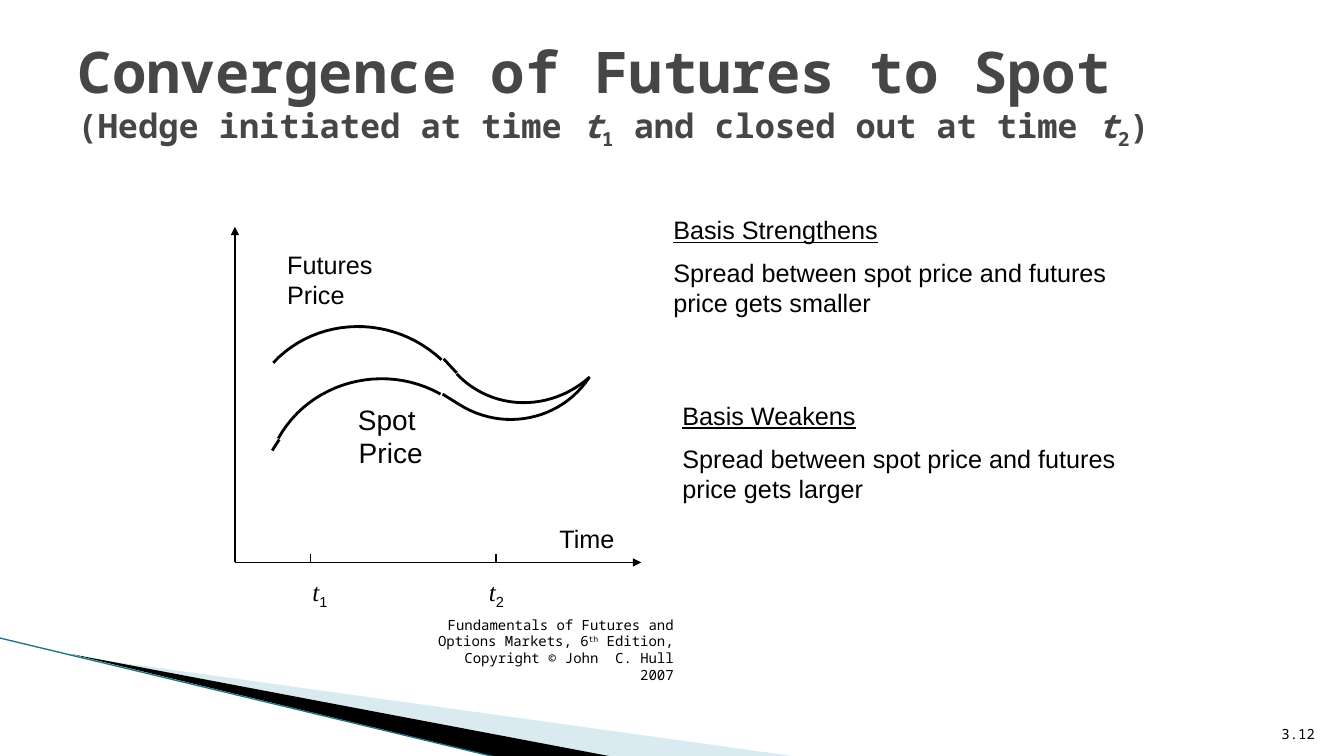
from lxml.etree import SubElement
from pptx import Presentation
from pptx.dml.color import RGBColor
from pptx.enum.shapes import MSO_CONNECTOR as Connector
from pptx.enum.text import MSO_ANCHOR as Anchor, PP_ALIGN as Align
from pptx.oxml.ns import qn
from pptx.util import Inches, Pt

COLORS = {"text": "000000", "title": "464646", "band": "A0CBDC",
          "edge": "1B7587", "ink": "000000"}
MONO, SANS, SERIF = "Noto Sans Mono", "Arial", "Times New Roman"


def color(name):
    return RGBColor.from_string(COLORS[name])


def add_run(paragraph, text, size, font=SANS, ink="text", bold=None,
            italic=None, underline=None, baseline=None):
    run = paragraph.add_run()
    run.text = text
    run.font.size = Pt(size)
    run.font.name = font
    run.font.bold, run.font.italic, run.font.underline = bold, italic, underline
    run.font.color.rgb = color(ink)
    if baseline:
        run.font._element.set("baseline", str(baseline * 1000))


def add_text(slide, box, paragraphs, align=Align.LEFT, anchor=Anchor.TOP,
             wrap=True, gap=0):
    frame = slide.shapes.add_textbox(*map(Inches, box)).text_frame
    frame.word_wrap = wrap
    frame.vertical_anchor = anchor
    for index, runs in enumerate(paragraphs):
        paragraph = frame.add_paragraph() if index else frame.paragraphs[0]
        paragraph.alignment = align
        if index:
            paragraph.space_before = Pt(gap)
        for text, style in runs:
            add_run(paragraph, text, **style)


def add_line(slide, start, end, width, ink="ink", arrow=None):
    line = slide.shapes.add_connector(
        Connector.STRAIGHT, *map(Inches, (*start, *end)))
    line.line.width = Pt(width)
    line.line.color.rgb = color(ink)
    if arrow:
        SubElement(line.line._get_or_add_ln(), qn(f"a:{arrow}"), type="triangle")
    SubElement(line._element.spPr, qn("a:effectLst"))


def add_outline(slide, points, closed):
    first, *rest = [tuple(map(Inches, point)) for point in points]
    builder = slide.shapes.build_freeform(*first)
    builder.add_line_segments(rest, close=closed)
    outline = builder.convert_to_shape()
    outline.shadow.inherit = False
    return outline


def add_curve(slide, bends, steps=24):
    points = []
    for step in range(steps + 1):
        t = step / steps
        weights = ((1 - t) ** 3, 3 * t * (1 - t) ** 2, 3 * t * t * (1 - t), t ** 3)
        points.append([sum(w * bend[axis] for w, bend in zip(weights, bends))
                       for axis in (0, 1)])
    curve = add_outline(slide, points, closed=False)
    curve.fill.background()
    curve.line.color.rgb = color("ink")
    curve.line.width = Pt(2)


def add_backdrop(slide, left, top):
    bands = (
        ("band", 40, [(0.73, 0.18), (7.93, 1.18), (6.08, 1.18)]),
        ("ink", 100, [(0.71, 0.16), (6.09, 1.18), (4.96, 1.19)]),
    )
    for ink, opacity, corners in bands:
        band = add_outline(slide, [(left + x, top + y) for x, y in corners], True)
        band.fill.solid()
        band.fill.fore_color.rgb = color(ink)
        band.line.fill.background()
        fill = band._element.spPr.find(qn("a:solidFill"))
        SubElement(fill[0], qn("a:alpha"), val=str(opacity * 1000))
    add_line(slide, (left, top), (left + 4.95, top + 1.19), 0.95, "edge")


def add_title(slide, box):
    title = slide.shapes.title
    title.left, title.top, title.width, title.height = map(Inches, box)
    frame = title.text_frame
    frame.word_wrap = True
    frame.vertical_anchor = Anchor.MIDDLE
    heading = frame.paragraphs[0]
    heading.alignment = Align.LEFT
    look = dict(font=MONO, ink="title", bold=True)
    add_run(heading, "Convergence of Futures to Spot", 41, **look)
    heading.add_line_break()
    for text, style in (
        ("(Hedge initiated at time ", {}),
        ("t", {"italic": True}),
        ("1", {"baseline": -25}),
        (" and closed out at time ", {}),
        ("t", {"italic": True}),
        ("2", {"baseline": -25}),
        (")", {}),
    ):
        add_run(heading, text, 24, **look, **style)


def add_price_chart(slide, left, top, width, height):
    def at(x, y):
        return left + x, top + y

    add_line(slide, at(0, 0), at(0, height), 1, arrow="headEnd")
    add_line(slide, at(0, height), at(width, height), 1, arrow="tailEnd")

    curves = (
        [(0.38, 1.35), (0.82, 0.88), (1.57, 0.87), (2.05, 1.32)],
        [(2.2, 1.46), (2.55, 1.83), (3.13, 1.84), (3.52, 1.49)],
        [(0.43, 2.1), (0.74, 1.54), (1.47, 1.34), (2.04, 1.66)],
        [(2.22, 1.76), (2.66, 2.04), (3.23, 1.92), (3.51, 1.5)],
    )
    for bends in curves:
        add_curve(slide, [at(*bend) for bend in bends])
    joins = (
        ((2.07, 1.31), (2.2, 1.45)),
        ((2.06, 1.66), (2.22, 1.76)),
        ((0.44, 2.11), (0.37, 2.22)),
    )
    for start, end in joins:
        add_line(slide, at(*start), at(*end), 2)

    plain = dict(size=18)
    large = dict(size=20)
    add_text(slide, (*at(3.12, 2.89), 0.75, 0.4), [[("Time", plain)]], wrap=False)
    add_text(slide, (*at(0.92, 1.69), 1.25, 0.76),
             [[("Spot ", large)], [("Price", large)]], Align.CENTER)
    add_text(slide, (*at(0.42, 0.17), 3.6, 0.7),
             [[("Futures", plain)], [("Price", plain)]])

    for digit, tick, label in (("1", 0.75, 0.67), ("2", 2.59, 2.42)):
        add_line(slide, at(tick, height), at(tick, height - 0.08), 1)
        add_text(slide, (*at(label, height + 0.09), 0.42, 0.4), [[
            ("t", dict(size=18, font=SERIF, italic=True)),
            (digit, dict(size=18, baseline=-25))]])


def add_basis_note(slide, box, heading, explanation):
    add_text(slide, box, [[(heading, dict(size=18, underline=True))],
                          [(explanation, dict(size=18))]], gap=9)


def add_footer(slide, credit_box, number_box):
    small = dict(size=10, font=MONO)
    credit = [("Fundamentals of Futures and Options Markets, 6", small),
              ("th", dict(small, baseline=30)),
              (" Edition, Copyright © John  C. Hull 2007", small)]
    for box, runs in ((credit_box, credit), (number_box, [("3.12", small)])):
        add_text(slide, box, [runs], Align.RIGHT, Anchor.BOTTOM)


def main():
    deck = Presentation()
    deck.slide_width, deck.slide_height = Inches(13.33), Inches(7.5)
    slide = deck.slides.add_slide(deck.slide_layouts[5])
    add_backdrop(slide, 0, 6.33)
    add_footer(slide, (4.21, 6.43, 2.57, 0.4), (12.61, 7.01, 0.53, 0.4))
    add_title(slide, (0.67, 0.3, 12, 1.25))
    add_price_chart(slide, 2.33, 2.25, 4.03, 3.33)
    add_basis_note(slide, (6.58, 2.08, 4.5, 1.15), "Basis Strengthens",
                   "Spread between spot price and futures price gets smaller")
    add_basis_note(slide, (6.67, 3.92, 4.5, 1.15), "Basis Weakens",
                   "Spread between spot price and futures price gets larger")
    deck.save("out.pptx")


if __name__ == "__main__":
    main()
